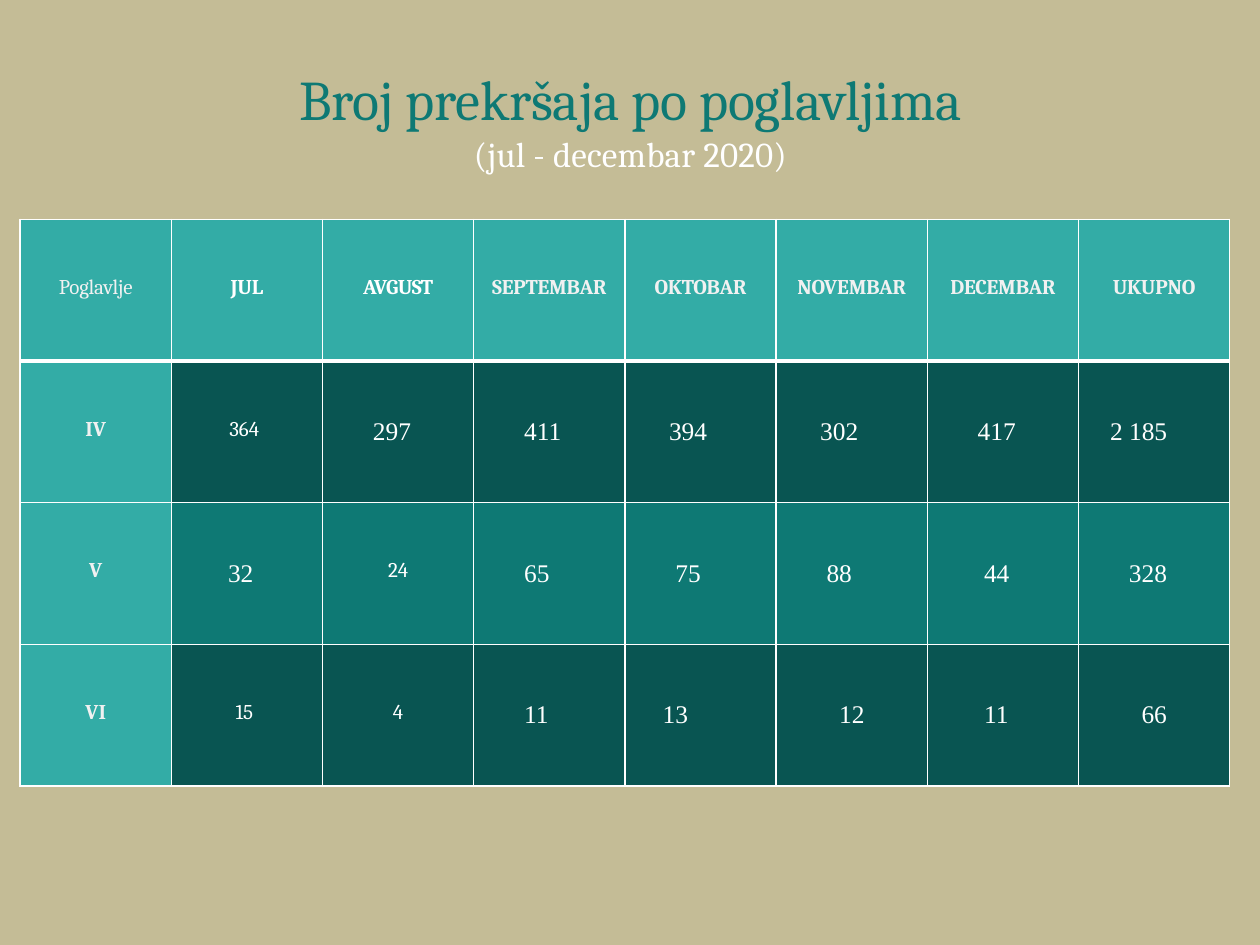
"""Build a slide with a table of offences by chapter and month."""
from lxml import etree
from pptx import Presentation, util as u
from pptx.dml.color import RGBColor
from pptx.enum import text
from pptx.oxml.ns import qn

COLORS = {"sand": "C4BC96", "teal": "0E7974", "dark": "095552",
          "light": "33ACA6", "white": "FFFFFF", "pale": "F1F1F1"}
SERIF, ROMAN = "Cambria", "Times New Roman"
HEADINGS = ["Poglavlje", "JUL", "AVGUST", "SEPTEMBAR", "OKTOBAR",
            "NOVEMBAR", "DECEMBAR", "UKUPNO"]
CHAPTERS = [["IV", "364", "297", "411", "394", "302", "417", "2 185"],
            ["V", "32", "24", "65", "75", "88", "44", "328"],
            ["VI", "15", "4", "11", "13", "12", "11", "66"]]
INDENTS = [[None, 0.47, None, None, None, None, None, None],
           [None, 0.46, 0.4, 0.4, 0.35, 0.35, 0.4, 0.25],
           [None, 0.45, None, 0.4, 0.4, 0.4, 0.45, 0.4],
           [None, 0.51, None, 0.4, 0.3, 0.5, 0.45, 0.5]]
SERIF_NUMBERS = {"364", "24", "15", "4"}
COLUMN, ROW = 1.2, 1.125


def rgb(name):
    """Return the named colour."""
    return RGBColor.from_string(COLORS[name])


def apply(target, values):
    """Set attributes of an object from a dict."""
    for name, value in values.items():
        setattr(target, name, value)


def add_span(para, words, color, spacing=0, **font):
    """Add a formatted run, with letter spacing in points."""
    span = para.add_run()
    span.text = words
    apply(span.font, font)
    span.font.color.rgb = rgb(color)
    span.font._element.set("spc", str(round(spacing * 100)))


def add_title(page):
    """Fill the title placeholder with a heading and its period."""
    box = page.shapes.title
    apply(box, {"left": u.Inches(2.2), "top": u.Inches(0.5),
                "width": u.Inches(5.61), "height": u.Inches(0.9)})
    frame = box.text_frame
    apply(frame, {"margin_left": 0, "margin_right": 0, "margin_bottom": 0,
                  "margin_top": u.Inches(0.01), "word_wrap": True,
                  "vertical_anchor": text.MSO_ANCHOR.TOP,
                  "auto_size": text.MSO_AUTO_SIZE.SHAPE_TO_FIT_TEXT})
    lines = [("Broj prekršaja po poglavljima", 32, "teal", -0.1, 0.9),
             ("(jul - decembar 2020)", 20, "white", 0.1, 0.3)]
    for index, (words, size, color, spacing, before) in enumerate(lines):
        para = frame.add_paragraph() if index else frame.paragraphs[0]
        apply(para, {"alignment": text.PP_ALIGN.CENTER,
                     "space_before": u.Pt(before)})
        add_span(para, words, color, spacing, size=u.Pt(size), name=SERIF)


def add_borders(cell, widths):
    """Draw white cell borders with the given widths in points."""
    properties = cell._tc.get_or_add_tcPr()
    for side, width in widths.items():
        line = etree.SubElement(properties, qn(f"a:ln{side}"), w=str(u.Pt(width)))
        fill = etree.SubElement(line, qn("a:solidFill"))
        etree.SubElement(fill, qn("a:srgbClr"), val=COLORS["white"])


def format_cell(cell, words, row, column):
    """Write and style one cell by its place in the grid."""
    indent = INDENTS[row][column]
    label = row == 0 or column == 0
    serif = label or words in SERIF_NUMBERS
    add_borders(cell, {"L": 1, "R": 1, "T": 3 if row == 1 else 1,
                       "B": 3 if row == 0 else 1})
    cell.fill.solid()
    cell.fill.fore_color.rgb = rgb("light" if label else "dark" if row % 2 else "teal")
    apply(cell, {"margin_left": u.Inches(indent or 0), "margin_right": 0,
                 "margin_top": 0, "margin_bottom": u.Inches(0.04 if serif else 0),
                 "vertical_anchor": text.MSO_ANCHOR.MIDDLE})
    para = cell.text_frame.paragraphs[0]
    para.alignment = text.PP_ALIGN.LEFT if indent else text.PP_ALIGN.CENTER
    white = not label or words in ("JUL", "AVGUST")
    spacing = -0.3 if words == "AVGUST" else -0.1 if row == 0 else 0
    add_span(para, words, "white" if white else "pale", spacing,
             size=u.Pt(12 if serif else 14.5), name=SERIF if serif else ROMAN,
             bold=label and words != "Poglavlje")


def add_counts(page):
    """Add the table of counts."""
    rows = [HEADINGS, *CHAPTERS]
    sizes = [u.Inches(value) for value in
             (0.16, 1.74, COLUMN * len(HEADINGS), ROW * len(rows))]
    table = page.shapes.add_table(len(rows), len(HEADINGS), *sizes).table
    for row, values in enumerate(rows):
        for column, words in enumerate(values):
            format_cell(table.cell(row, column), words, row, column)


def main():
    """Build and save the deck."""
    deck = Presentation()
    apply(deck, {"slide_width": u.Inches(10), "slide_height": u.Inches(7.5)})
    page = deck.slides.add_slide(deck.slide_layouts.get_by_name("Title Only"))
    page.background.fill.solid()
    page.background.fill.fore_color.rgb = rgb("sand")
    add_title(page)
    add_counts(page)
    deck.save("out.pptx")


if __name__ == "__main__":
    main()
